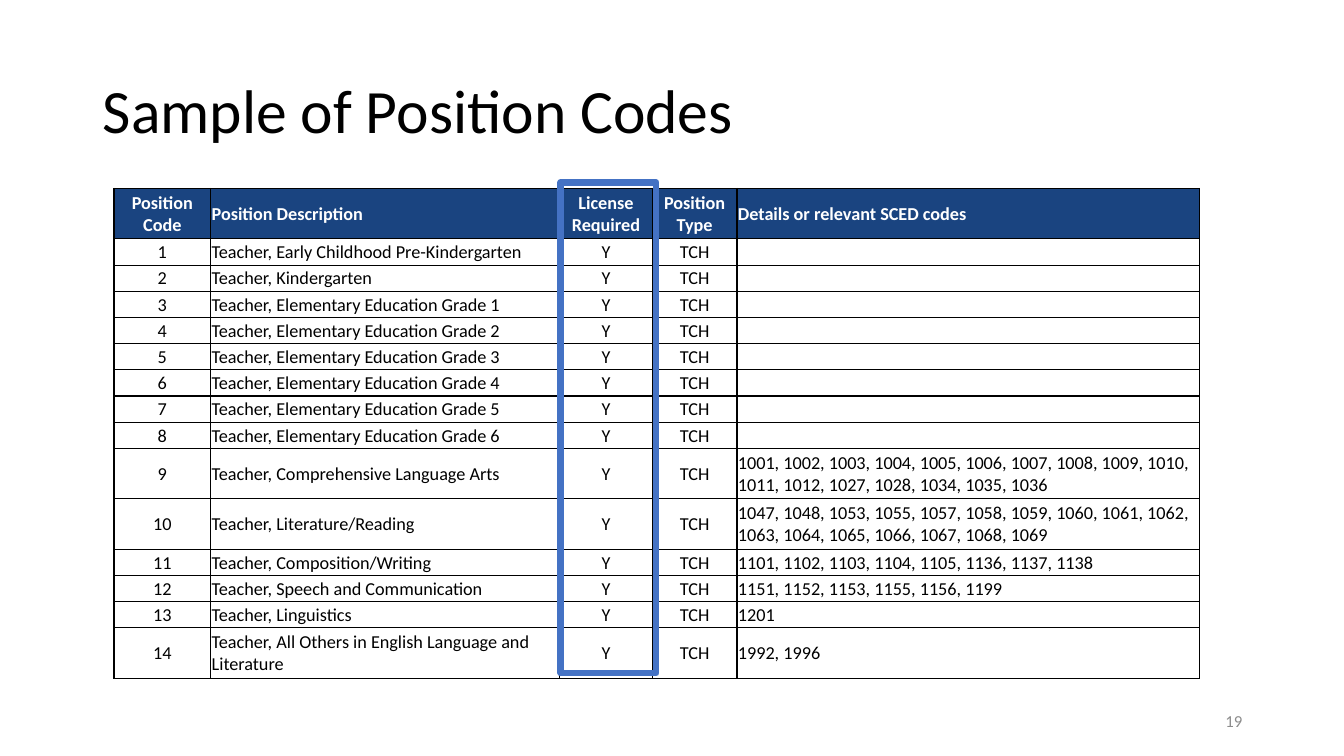
from dataclasses import dataclass

from lxml import etree
from pptx import Presentation
from pptx import util as u
from pptx.dml.color import RGBColor
from pptx.enum import shapes, text
from pptx.oxml.ns import qn


@dataclass(frozen=True)
class Theme:
    font: str = "Calibri"
    ink: str = "000000"
    paper: str = "FFFFFF"
    navy: str = "1A4480"
    blue: str = "4472C4"
    grey: str = "8C8C8C"
    title_size: int = 44
    table_size: int = 13
    number_size: int = 12
    border_width: float = 1
    highlight_width: float = 4.5


LEFT, CENTER, RIGHT = text.PP_ALIGN.LEFT, text.PP_ALIGN.CENTER, text.PP_ALIGN.RIGHT
COLUMN_WIDTHS = [0.96, 3.46, 0.92, 0.84, 4.59]
COLUMN_ALIGNMENTS = [CENTER, LEFT, CENTER, CENTER, LEFT]
ROW_HEIGHT, TALL_ROW_HEIGHT = 0.26, 0.5
TALL_ROWS = {0, 9, 10, 14}
HEADINGS = [
    "Position Code",
    "Position Description",
    "License Required",
    "Position Type",
    "Details or relevant SCED codes",
]
POSITIONS = [
    ("Early Childhood Pre-Kindergarten", ""),
    ("Kindergarten", ""),
    *((f"Elementary Education Grade {grade}", "") for grade in range(1, 7)),
    ("Comprehensive Language Arts",
     "1001, 1002, 1003, 1004, 1005, 1006, 1007, 1008, 1009, 1010, "
     "1011, 1012, 1027, 1028, 1034, 1035, 1036"),
    ("Literature/Reading",
     "1047, 1048, 1053, 1055, 1057, 1058, 1059, 1060, 1061, 1062, "
     "1063, 1064, 1065, 1066, 1067, 1068, 1069"),
    ("Composition/Writing", "1101, 1102, 1103, 1104, 1105, 1136, 1137, 1138"),
    ("Speech and Communication", "1151, 1152, 1153, 1155, 1156, 1199"),
    ("Linguistics", "1201"),
    ("All Others in English Language and Literature", "1992, 1996"),
]


class SlideBuilder:
    def __init__(self, deck, theme):
        self.theme = theme
        self.page = deck.slides.add_slide(deck.slide_layouts[5])

    def add_words(self, frame, words, size, color, align=LEFT, bold=False):
        para = frame.paragraphs[0]
        para.alignment = align
        if words:
            span = para.add_run()
            span.text = words
            span.font.name = self.theme.font
            span.font.size = u.Pt(size)
            span.font.bold = bold
            span.font.color.rgb = RGBColor.from_string(color)
        else:
            end = etree.SubElement(para._p, qn("a:endParaRPr"))
            end.set("sz", str(size * 100))
        return para

    def title(self, words, left, top, width, height):
        box = self.page.shapes.title
        box.left, box.top = u.Inches(left), u.Inches(top)
        box.width, box.height = u.Inches(width), u.Inches(height)
        box.text_frame.vertical_anchor = text.MSO_ANCHOR.MIDDLE
        para = self.add_words(box.text_frame, words, self.theme.title_size, self.theme.ink)
        para.line_spacing = 0.9

    def slide_number(self, words, left, top, width, height):
        box = self.page.shapes.add_textbox(
            u.Inches(left), u.Inches(top), u.Inches(width), u.Inches(height))
        box.text_frame.word_wrap = True
        box.text_frame.vertical_anchor = text.MSO_ANCHOR.MIDDLE
        self.add_words(box.text_frame, words, self.theme.number_size, self.theme.grey, RIGHT)

    def borders(self, cell):
        properties = cell._tc.get_or_add_tcPr()
        for index, side in enumerate(("lnL", "lnR", "lnT", "lnB")):
            line = etree.Element(qn(f"a:{side}"), w=str(u.Pt(self.theme.border_width)))
            fill = etree.SubElement(line, qn("a:solidFill"))
            etree.SubElement(fill, qn("a:srgbClr"), val=self.theme.ink)
            properties.insert(index, line)

    def cell(self, cell, words, align, heading):
        cell.margin_left = cell.margin_right = cell.margin_top = u.Inches(0.01)
        cell.margin_bottom = 0
        cell.vertical_anchor = text.MSO_ANCHOR.MIDDLE
        if heading:
            cell.fill.solid()
            cell.fill.fore_color.rgb = RGBColor.from_string(self.theme.navy)
        else:
            cell.fill.background()
        self.borders(cell)
        color = self.theme.paper if heading else self.theme.ink
        self.add_words(cell.text_frame, words, self.theme.table_size, color, align, heading)

    def table(self, rows, left, top):
        heights = [TALL_ROW_HEIGHT if index in TALL_ROWS else ROW_HEIGHT
                   for index in range(len(rows))]
        grid = self.page.shapes.add_table(
            len(rows), len(COLUMN_WIDTHS), u.Inches(left), u.Inches(top),
            u.Inches(sum(COLUMN_WIDTHS)), u.Inches(sum(heights))).table
        grid.horz_banding = False
        for column, width in zip(grid.columns, COLUMN_WIDTHS):
            column.width = u.Inches(width)
        for index, (row, height, values) in enumerate(zip(grid.rows, heights, rows)):
            row.height = u.Inches(height)
            for cell, words, align in zip(row.cells, values, COLUMN_ALIGNMENTS):
                self.cell(cell, words, align, index == 0)

    def highlight(self, left, top, width, height):
        box = self.page.shapes.add_shape(
            shapes.MSO_SHAPE.RECTANGLE,
            u.Inches(left), u.Inches(top), u.Inches(width), u.Inches(height))
        box.shadow.inherit = False
        box.fill.background()
        box.line.color.rgb = RGBColor.from_string(self.theme.blue)
        box.line.width = u.Pt(self.theme.highlight_width)


def main():
    deck = Presentation()
    deck.slide_width, deck.slide_height = u.Inches(13.33), u.Inches(7.5)
    slide = SlideBuilder(deck, Theme())
    slide.title("Sample of Position Codes", 0.92, 0.4, 11.5, 1.45)
    slide.slide_number("19", 9.42, 6.95, 3, 0.4)
    rows = [HEADINGS] + [
        [str(code), f"Teacher, {subject}", "Y", "TCH", details]
        for code, (subject, details) in enumerate(POSITIONS, 1)]
    slide.table(rows, 1.13, 1.87)
    slide.highlight(5.56, 1.81, 0.95, 4.87)
    deck.save("out.pptx")


if __name__ == "__main__":
    main()
